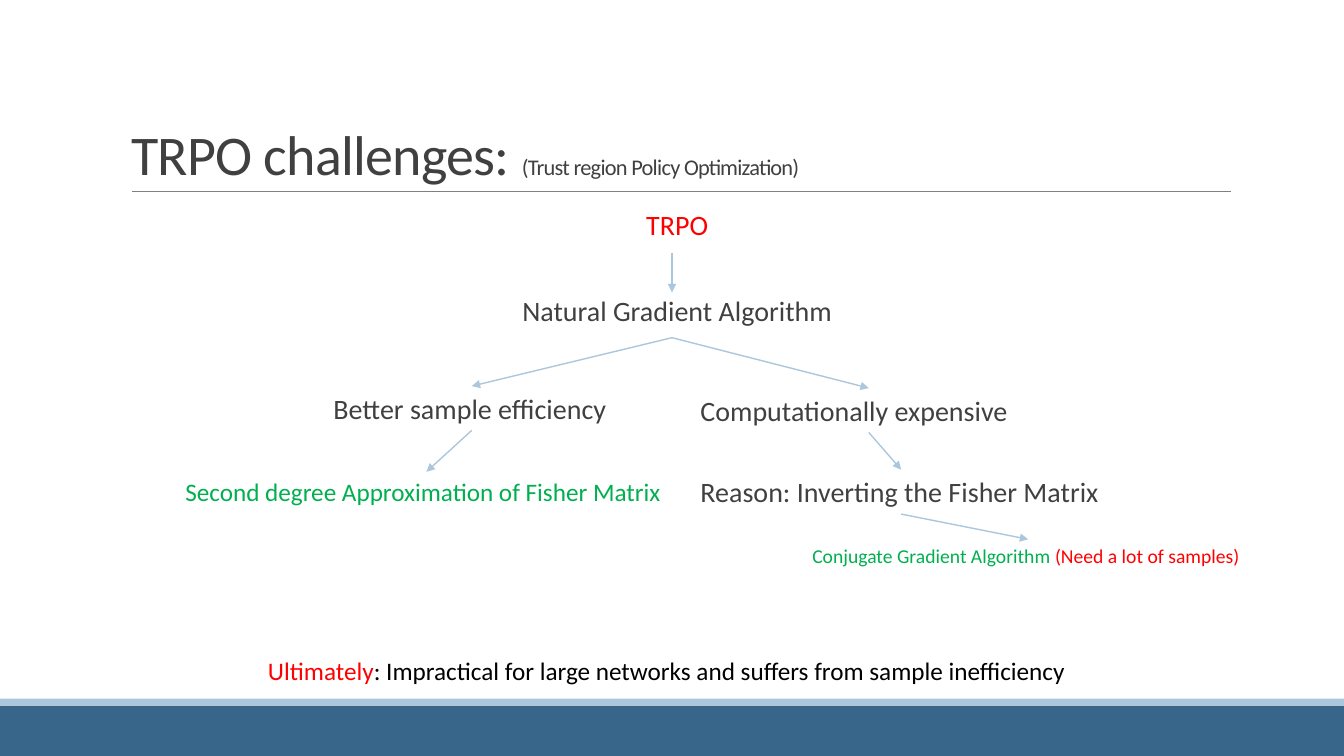
from dataclasses import dataclass

from pptx import Presentation
from pptx import util as u
from pptx.dml.color import RGBColor
from pptx.enum import shapes, text
from pptx.oxml import parse_xml
from pptx.oxml.ns import nsdecls, qn

FONT = "Calibri"
GREY, RED, GREEN, BLACK = "404040", "FF0000", "00B050", "000000"
NAVY, PALE, RULE = "38668B", "ABC7DD", "808080"
WIDTH, HEIGHT = 960, 540


@dataclass(frozen=True)
class Run:
    text: str
    size: float
    color: str


@dataclass(frozen=True)
class Label:
    left: float
    top: float
    width: float
    height: float
    runs: tuple[Run, ...]
    centred: bool = False
    wrap: bool = True


@dataclass(frozen=True)
class Line:
    start: tuple[float, float]
    end: tuple[float, float]
    color: str = PALE
    weight: float = 1
    arrow: bool = True


@dataclass(frozen=True)
class Band:
    top: float
    height: float
    color: str


BANDS = (Band(504, 36, NAVY), Band(499, 5, PALE))
TITLE_RULE = Line((94.3, 136.8), (879, 136.8), RULE, 0.5, False)

TITLE = (
    Run("TRPO challenges: ", 40, GREY),
    Run("(Trust region Policy Optimization)", 16, GREY),
)

LABELS = (
    Label(84.2, 208.8, 792, 32.4,
          (Run("Natural Gradient Algorithm", 20, GREY),), centred=True),
    Label(393.8, 147.6, 172.8, 73.4, (Run("TRPO", 20, RED),), centred=True),
    Label(231.1, 275.8, 212.4, 32.4, (Run("Better sample efficiency", 20, GREY),)),
    Label(493.2, 277.2, 255.6, 31.7, (Run("Computationally expensive", 20, GREY),)),
    Label(493.2, 335.5, 301.7, 31.7,
          (Run("Reason: Inverting the Fisher Matrix", 20, GREY),), wrap=False),
    Label(573.1, 385.2, 322.6, 24.5,
          (Run("Conjugate Gradient Algorithm ", 14, GREEN),
           Run("(Need a lot of samples)", 14, RED)), wrap=False),
    Label(125.3, 337, 357.8, 28.8,
          (Run("Second degree Approximation of Fisher Matrix", 18, GREEN),), wrap=False),
    Label(184.3, 464.4, 591.1, 28.8,
          (Run("Ultimately", 18, RED),
           Run(": Impractical for large networks and suffers from sample inefficiency",
               18, BLACK)), wrap=False),
)

CENTRE = WIDTH / 2
ARROWS = (
    Line((CENTRE, 180.7), (CENTRE, 208.8)),
    Line((CENTRE, 241.2), (337, 275.8)),
    Line((CENTRE, 241.2), (620.6, 277.2)),
    Line((620.6, 308.9), (643.7, 335.5)),
    Line((337, 307.4), (304.6, 337)),
    Line((643.7, 367.2), (734.4, 385.2)),
)


def rgb(color: str) -> RGBColor:
    return RGBColor.from_string(color)


def add_run(p, content: str, *, size: float, color: str, spacing: int = 0) -> None:
    r = p.add_run()
    r.text = content
    r.font.name = FONT
    r.font.size = u.Pt(size)
    r.font.color.rgb = rgb(color)
    if spacing:
        r._r.get_or_add_rPr().set("spc", str(spacing))


def add_band(s, band: Band) -> None:
    sp = s.shapes.add_shape(shapes.MSO_SHAPE.RECTANGLE, 0, u.Pt(band.top),
                            u.Pt(WIDTH), u.Pt(band.height))
    sp.shadow.inherit = False
    sp.fill.solid()
    sp.fill.fore_color.rgb = rgb(band.color)
    sp.line.fill.background()


def add_line(s, line: Line) -> None:
    cx = s.shapes.add_connector(shapes.MSO_CONNECTOR.STRAIGHT,
                                *(u.Pt(v) for v in line.start + line.end))
    cx.line.color.rgb = rgb(line.color)
    cx.line.width = u.Pt(line.weight)
    sp_pr = cx._element.spPr
    if line.arrow:
        sp_pr.find(qn("a:ln")).append(
            parse_xml(f'<a:tailEnd {nsdecls("a")} type="triangle"/>'))
    sp_pr.append(parse_xml(f'<a:effectLst {nsdecls("a")}/>'))


def add_label(s, label: Label) -> None:
    sp = s.shapes.add_textbox(u.Pt(label.left), u.Pt(label.top),
                              u.Pt(label.width), u.Pt(label.height))
    tf = sp.text_frame
    tf.word_wrap = label.wrap
    p = tf.paragraphs[0]
    if label.centred:
        tf.margin_right = 0
        p.alignment = text.PP_ALIGN.CENTER
        p.line_spacing = 0.9
    for run in label.runs:
        add_run(p, run.text, size=run.size, color=run.color)


def format_title(s) -> None:
    sp = s.shapes.title
    sp.left, sp.top, sp.width, sp.height = (u.Pt(v) for v in (86.4, 22.3, 792, 114.5))
    tf = sp.text_frame
    tf.word_wrap = True
    tf.auto_size = text.MSO_AUTO_SIZE.NONE
    tf.vertical_anchor = text.MSO_ANCHOR.BOTTOM
    p = tf.paragraphs[0]
    p.alignment = text.PP_ALIGN.LEFT
    p.line_spacing = 0.85
    for run in TITLE:
        add_run(p, run.text, size=run.size, color=run.color, spacing=-50)


def main() -> None:
    prs = Presentation()
    prs.slide_width, prs.slide_height = u.Pt(WIDTH), u.Pt(HEIGHT)
    s = prs.slides.add_slide(prs.slide_layouts[5])
    format_title(s)
    for band in BANDS:
        add_band(s, band)
    for line in (TITLE_RULE, *ARROWS):
        add_line(s, line)
    for label in LABELS:
        add_label(s, label)
    prs.save("out.pptx")


if __name__ == "__main__":
    main()
